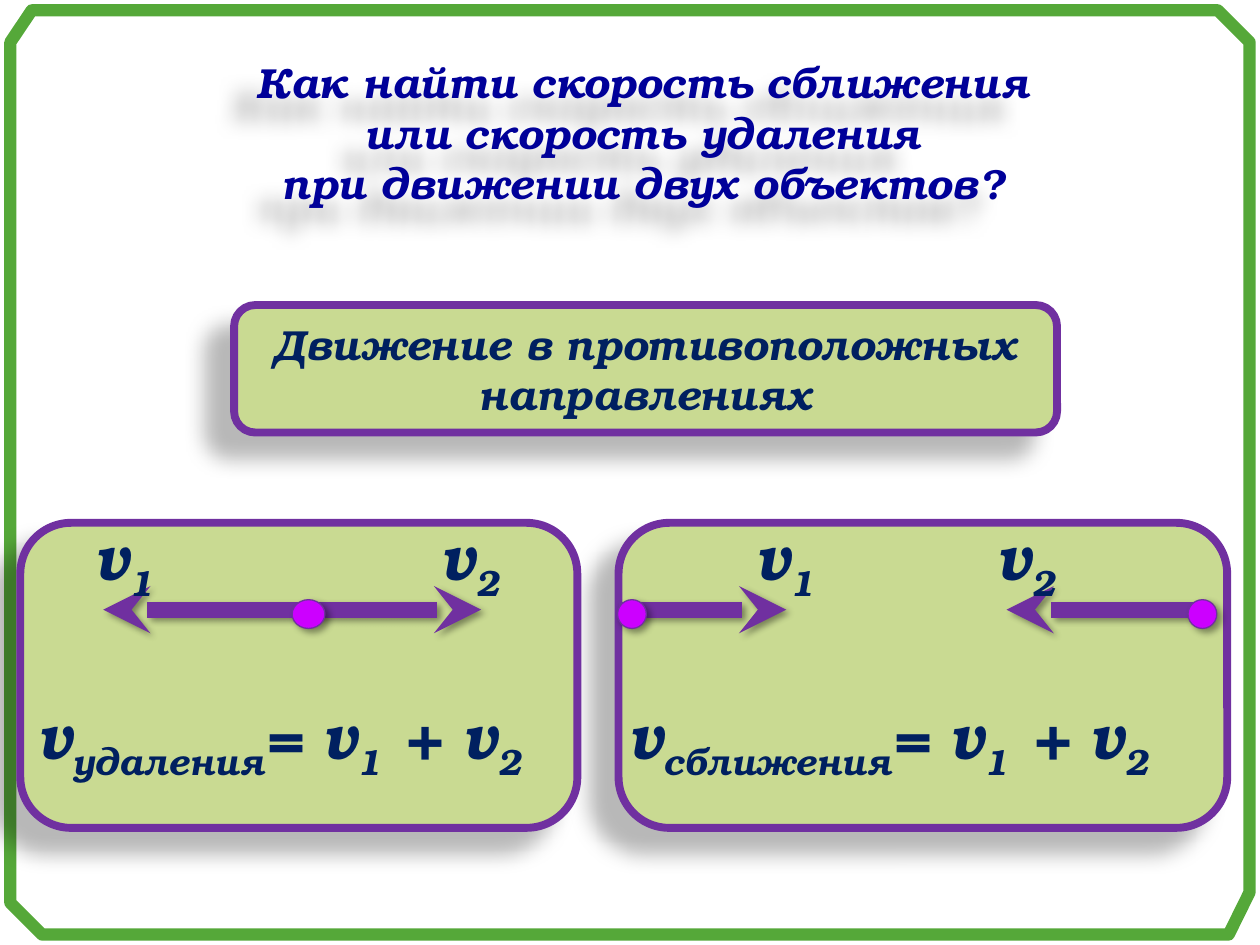
from lxml import etree
from pptx import Presentation
from pptx.dml.color import RGBColor
from pptx.enum import shapes, text
from pptx.oxml import ns
from pptx.util import Cm, Pt

COLORS = {"frame": "55A839", "panel": "C9DA92", "purple": "7030A0", "dot": "CC00FF",
          "navy": "002060", "title": "000099", "shadow": "000000"}
COLORS = {name: RGBColor.from_string(value) for name, value in COLORS.items()}
FONT = "TeX Gyre Bonum"
# Opacity in percent, blur and distance in points, direction in degrees
DEEP_SHADOW = (28, 11.8, 19.7, 141)
SMALL_SHADOW = (40, 4, 3, 45)


def add_shadow(shape, opacity, blur, distance, direction):
    properties = shape._element.spPr
    effects = etree.SubElement(properties, ns.qn("a:effectLst"))
    outer = etree.SubElement(effects, ns.qn("a:outerShdw"), blurRad=str(Pt(blur)),
                             dist=str(Pt(distance)), dir=str(direction * 60000),
                             algn="ctr", rotWithShape="0")
    color = etree.SubElement(outer, ns.qn("a:srgbClr"), val=str(COLORS["shadow"]))
    etree.SubElement(color, ns.qn("a:alpha"), val=str(opacity * 1000))


def add_run(paragraph, words, size, color="navy", subscript=False):
    run = paragraph.add_run()
    run.text = words
    run.font.name = FONT
    run.font.size = Pt(size)
    run.font.bold = run.font.italic = True
    run.font.color.rgb = COLORS[color]
    if subscript:
        run._r.get_or_add_rPr().set("baseline", "-25000")


presentation = Presentation()
presentation.slide_width, presentation.slide_height = Cm(25.4), Cm(19.05)
slide = presentation.slides.add_slide(presentation.slide_layouts[5])

# Frame with cut corners
corners = [(0.21, 0.85), (0.21, 18.2), (0.85, 18.84), (24.77, 18.84),
           (25.19, 17.99), (25.19, 0.85), (24.55, 0.21), (0.64, 0.21)]
corners = [(Cm(x), Cm(y)) for x, y in corners]
builder = slide.shapes.build_freeform(*corners[0])
builder.add_line_segments(corners[1:], close=True)
frame = builder.convert_to_shape()
frame.fill.background()
frame.line.color.rgb = COLORS["frame"]
frame.line.width = Pt(7)
frame.shadow.inherit = False

# Title
title = slide.shapes.title
title.left, title.top, title.width, title.height = Cm(1.3), Cm(0.79), Cm(23.32), Cm(3.76)
add_shadow(title, *DEEP_SHADOW)
title_frame = title.text_frame
title_frame.auto_size = text.MSO_AUTO_SIZE.NONE
title_frame.vertical_anchor = text.MSO_ANCHOR.MIDDLE
title_lines = ["Как найти скорость сближения", "или скорость удаления",
               "при движении двух объектов?"]
for index, line in enumerate(title_lines):
    paragraph = title_frame.add_paragraph() if index else title_frame.paragraphs[0]
    paragraph.alignment = text.PP_ALIGN.CENTER
    add_run(paragraph, line, 24, "title")

# Two panels and the banner above them
for left, top, width, height, words in [
        (12.47, 10.54, 12.27, 6.15, ""),
        (0.41, 10.54, 11.23, 6.15, ""),
        (4.72, 6.15, 16.59, 2.57, "Движение в противоположных направлениях")]:
    panel = slide.shapes.add_shape(shapes.MSO_SHAPE.ROUNDED_RECTANGLE,
                                   Cm(left), Cm(top), Cm(width), Cm(height))
    panel.fill.solid()
    panel.fill.fore_color.rgb = COLORS["panel"]
    panel.line.color.rgb = COLORS["purple"]
    panel.line.width = Pt(4.5)
    add_shadow(panel, *DEEP_SHADOW)
    if words:
        panel.text_frame.word_wrap = True
        paragraph = panel.text_frame.paragraphs[0]
        paragraph.alignment = text.PP_ALIGN.CENTER
        add_run(paragraph, words, 24)

# Velocity arrows
for start, end in [(6.32, 9.7), (6.12, 2.08), (12.47, 15.85), (24.31, 20.29)]:
    arrow = slide.shapes.add_connector(shapes.MSO_CONNECTOR.STRAIGHT,
                                       Cm(start), Cm(12.29), Cm(end), Cm(12.29))
    arrow.line.color.rgb = COLORS["purple"]
    arrow.line.width = Pt(9)
    etree.SubElement(arrow.line._get_or_add_ln(), ns.qn("a:tailEnd"), type="stealth")
    add_shadow(arrow, *SMALL_SHADOW)

# Moving objects
for left, width in [(5.89, 0.66), (12.45, 0.58), (23.95, 0.58)]:
    dot = slide.shapes.add_shape(shapes.MSO_SHAPE.OVAL,
                                 Cm(left), Cm(12.09), Cm(width), Cm(0.58))
    dot.fill.solid()
    dot.fill.fore_color.rgb = COLORS["dot"]
    dot.line.color.rgb = COLORS["purple"]
    dot.line.width = Pt(0.75)
    add_shadow(dot, *SMALL_SHADOW)

# Velocity labels and formulas: every second part is a subscript
labels = [(left, 10.31, 1.9, ["v", number])
          for left, number in [(1.68, "1"), (8.66, "2"), (15.01, "1"), (19.86, "2")]]
formulas = [(left, 13.92, width, ["v", name, "= v", "1", " + v", "2"])
            for left, width, name in [(12.45, 12.29, "сближения"), (0.53, 11.13, "удаления")]]
for left, top, width, parts in labels + formulas:
    box = slide.shapes.add_textbox(Cm(left), Cm(top), Cm(width), Cm(1.8))
    box.text_frame.word_wrap = True
    for index, part in enumerate(parts):
        add_run(box.text_frame.paragraphs[0], part, 36, subscript=index % 2 == 1)

presentation.save("out.pptx")
